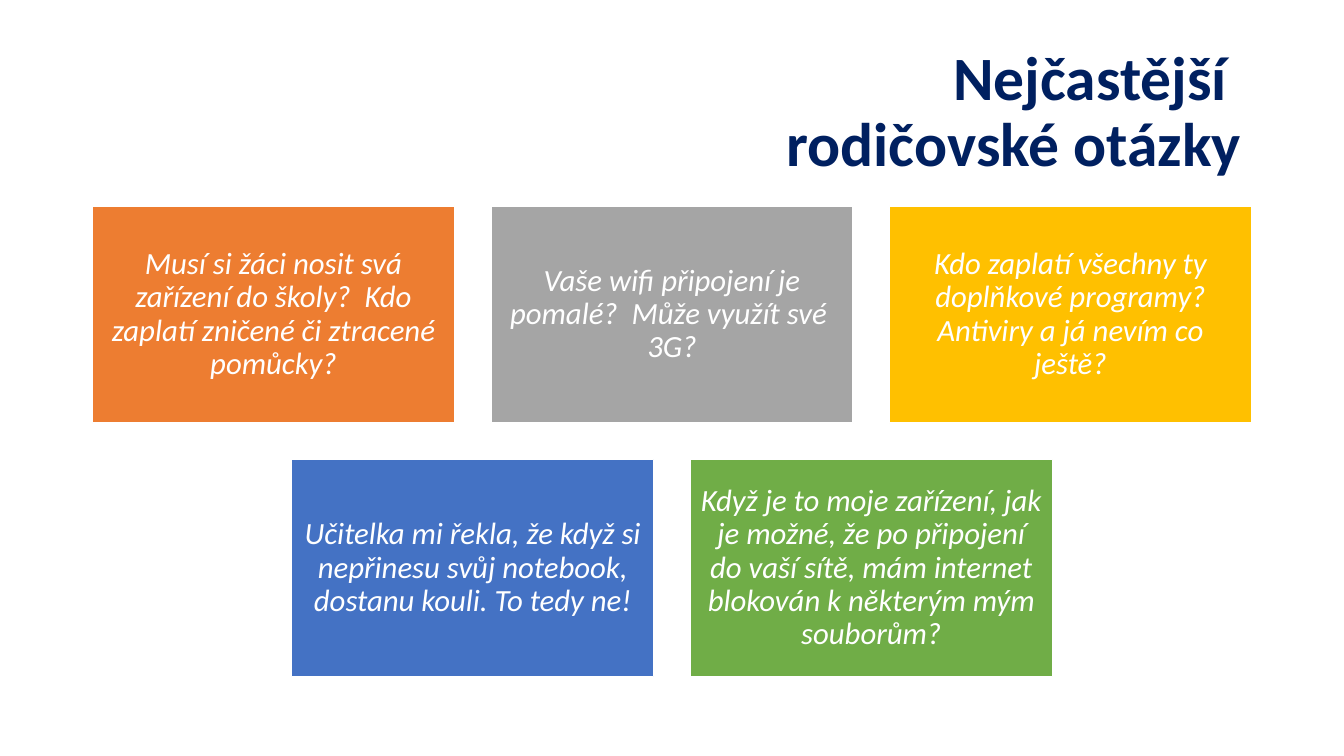
from pptx import Presentation
from pptx.dml.color import RGBColor
from pptx.enum.shapes import MSO_SHAPE as Shape
from pptx.enum.text import MSO_ANCHOR as Anchor, MSO_AUTO_SIZE as AutoSize, PP_ALIGN as Align
from pptx.util import Pt

NAVY = RGBColor(0x00, 0x20, 0x60)
WHITE = RGBColor(0xFF, 0xFF, 0xFF)
ORANGE = RGBColor(0xED, 0x7D, 0x31)
GRAY = RGBColor(0xA5, 0xA5, 0xA5)
YELLOW = RGBColor(0xFF, 0xC0, 0x00)
BLUE = RGBColor(0x44, 0x72, 0xC4)
GREEN = RGBColor(0x70, 0xAD, 0x47)

SLIDE_W, SLIDE_H = 960, 540
CARD_W, CARD_H, GAP = 258.75, 155.25, 25.88
CARDS_TOP = 147

QUESTION_ROWS = [
    [
        ("Musí si žáci nosit svá zařízení do školy?  Kdo zaplatí zničené či ztracené pomůcky?", ORANGE),
        ("Vaše wifi připojení je pomalé?  Může využít své  3G?", GRAY),
        ("Kdo zaplatí všechny ty doplňkové programy? Antiviry a já nevím co ještě?", YELLOW),
    ],
    [
        ("Učitelka mi řekla, že když si nepřinesu svůj notebook, dostanu kouli. To tedy ne!", BLUE),
        ("Když je to moje zařízení, jak je možné, že po připojení do vaší sítě, "
         "mám internet blokován k některým mým souborům?", GREEN),
    ],
]


def write_text(holder, text, size, color, align, inset=7.2, bold=False, italic=False):
    """Fill a shape with one formatted, vertically centred paragraph."""
    frame = holder.text_frame
    frame.text = text
    frame.word_wrap = True
    frame.auto_size = AutoSize.NONE
    frame.vertical_anchor = Anchor.MIDDLE
    frame.margin_left = frame.margin_right = Pt(inset)
    frame.margin_top = frame.margin_bottom = Pt(min(inset, 6.6))
    paragraph = frame.paragraphs[0]
    paragraph.alignment = align
    paragraph.line_spacing = 0.9
    for run in paragraph.runs:
        run.font.name = "Calibri"
        run.font.size = Pt(size)
        run.font.color.rgb = color
        run.font.bold = bold
        run.font.italic = italic


def add_title(slide, text):
    """Place and format the slide title."""
    title = slide.shapes.title
    title.left, title.top = Pt(66), Pt(28.75)
    title.width, title.height = Pt(828), Pt(104.4)
    write_text(title, text, 44, NAVY, Align.RIGHT, bold=True)


def add_card(slide, left, top, question, color):
    """Draw one coloured question card."""
    card = slide.shapes.add_shape(Shape.RECTANGLE, Pt(left), Pt(top), Pt(CARD_W), Pt(CARD_H))
    card.shadow.inherit = False
    card.fill.solid()
    card.fill.fore_color.rgb = color
    card.line.color.rgb = WHITE
    card.line.width = Pt(1)
    write_text(card, question, 22, WHITE, Align.CENTER, inset=6.6, italic=True)


def add_card_row(slide, top, questions):
    """Lay out one row of cards, centred on the slide."""
    row_w = len(questions) * (CARD_W + GAP) - GAP
    for column, (question, color) in enumerate(questions):
        left = (SLIDE_W - row_w) / 2 + column * (CARD_W + GAP)
        add_card(slide, left, top, question, color)


def main():
    """Build the slide and save it."""
    deck = Presentation()
    deck.slide_width, deck.slide_height = Pt(SLIDE_W), Pt(SLIDE_H)
    slide = deck.slides.add_slide(deck.slide_layouts[5])
    add_title(slide, "Nejčastější \vrodičovské otázky")
    for row, questions in enumerate(QUESTION_ROWS):
        add_card_row(slide, CARDS_TOP + row * (CARD_H + GAP), questions)
    deck.save("out.pptx")


if __name__ == "__main__":
    main()
